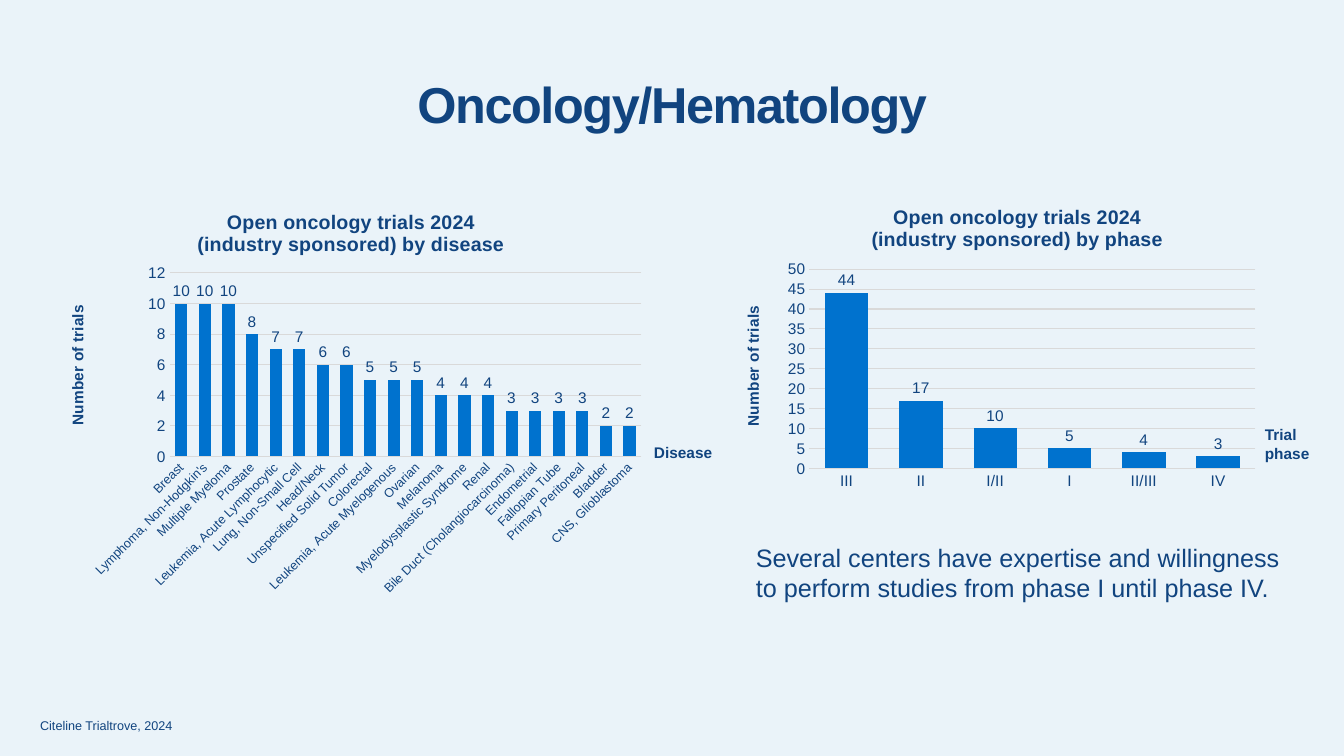
"""Build the Oncology/Hematology slide with two column charts and notes on the trials."""
from dataclasses import dataclass
from typing import Any

from lxml import etree
from pptx import Presentation
from pptx import util as u
from pptx.chart import data as cd
from pptx.dml.color import RGBColor
from pptx.enum import chart as ce, text as te
from pptx.oxml import ns

NAVY, BLUE, GREY, PALE = "11447F", "0072CE", "D9D9D9", "EAF3F9"
Box = tuple[float, float, float, float]


@dataclass
class Note:
    words: str
    box: Box
    size: float
    bold: bool = False


@dataclass
class Graph:
    title: list[str]
    box: Box
    data: list[tuple[str, int]]
    top: int
    step: int
    gap: int
    size: float
    turn: int
    plot: Box
    head: tuple[float, float]
    side: tuple[float, float]


NOTES = [
    Note("Citeline Trialtrove, 2024", (21.6, 509, 917.3, 20.2), 9),
    Note("Trial phase", (896.4, 300.2, 48.2, 33.8), 11, True),
    Note("Disease", (460, 313.2, 82.8, 20.9), 11, True),
    Note("Several centers have expertise and willingness to perform studies "
         "from phase I until phase IV.", (532.8, 383.8, 398.9, 51.1), 18),
]

GRAPHS = [
    Graph(["Open oncology trials 2024", "(industry sponsored) by disease"],
          (28, 135.4, 443.5, 298),
          [("Breast", 10), ("Lymphoma, Non-Hodgkin's", 10), ("Multiple Myeloma", 10),
           ("Prostate", 8), ("Leukemia, Acute Lymphocytic", 7),
           ("Lung, Non-Small Cell", 7), ("Head/Neck", 6),
           ("Unspecified Solid Tumor", 6), ("Colorectal", 5),
           ("Leukemia, Acute Myelogenous", 5), ("Ovarian", 5), ("Melanoma", 4),
           ("Myelodysplastic Syndrome", 4), ("Renal", 4),
           ("Bile Duct (Cholangiocarcinoma)", 3), ("Endometrial", 3),
           ("Fallopian Tube", 3), ("Primary Peritoneal", 3), ("Bladder", 2),
           ("CNS, Glioblastoma", 2)],
          12, 2, 94, 9, -45, (0.21, 0.2, 0.76, 0.44), (0.25, 0.04), (0.04, 0.27)),
    Graph(["Open oncology trials 2024", "(industry sponsored) by phase"],
          (520.6, 135.4, 383.8, 218.9),
          [("III", 44), ("II", 17), ("I/II", 10), ("I", 5), ("II/III", 4), ("IV", 3)],
          50, 5, 71, 11, 0, (0.15, 0.26, 0.83, 0.65), (0.26, 0.04), (0.02, 0.37)),
]


def tint(color: Any, code: str) -> None:
    """Give a colour format the hex colour."""
    color.rgb = RGBColor.from_string(code)


def apply(item: Any, **values: Any) -> None:
    """Set each named value on the item."""
    for name, value in values.items():
        setattr(item, name, value)


def style(font: Any, size: float, bold: bool = False) -> None:
    """Set the navy Arial font."""
    apply(font, name="Arial", size=u.Pt(size), bold=bold)
    tint(font.color, NAVY)


def points(box: Box) -> list[int]:
    """Turn a box in points into lengths."""
    return [u.Pt(value) for value in box]


def stroke(line: Any, code: str) -> None:
    """Draw a thin line in the hex colour."""
    tint(line.color, code)
    line.width = u.Pt(0.75)


def place(node: Any, spot: tuple[float, ...], index: int, inner: bool = False) -> None:
    """Put a chart part at fractions of the chart area."""
    for old in node.findall(ns.qn("c:layout")):
        node.remove(old)
    frame = etree.Element(ns.qn("c:layout"))
    hand = etree.SubElement(frame, ns.qn("c:manualLayout"))
    parts = [("layoutTarget", "inner")] if inner else []
    parts += [("xMode", "edge"), ("yMode", "edge"), *zip("xywh", spot)]
    for tag, value in parts:
        etree.SubElement(hand, ns.qn(f"c:{tag}")).set("val", str(value))
    node.insert(index, frame)


def label(frame: Any, lines: list[str], size: float) -> None:
    """Write bold lines in a chart title."""
    frame.text = "\n".join(lines)
    for para in frame.paragraphs:
        style(para.font, size, True)
        for run in para.runs:
            style(run.font, size, True)


def write(slide: Any, note: Note) -> None:
    """Add a wrapped text box."""
    frame = slide.shapes.add_textbox(*points(note.box)).text_frame
    apply(frame, word_wrap=True, text=note.words)
    style(frame.paragraphs[0].runs[0].font, note.size, note.bold)


def draw(slide: Any, graph: Graph) -> None:
    """Add a column chart."""
    names, counts = zip(*graph.data)
    data = cd.CategoryChartData()
    data.categories = names
    data.add_series("Series 1", counts)
    chart = slide.shapes.add_chart(
        ce.XL_CHART_TYPE.COLUMN_CLUSTERED, *points(graph.box), data).chart
    style(chart.font, 10)
    apply(chart, has_legend=False, has_title=True)
    label(chart.chart_title.text_frame, graph.title, 14)

    cats, vals = chart.category_axis, chart.value_axis
    for axis, size in ((cats, graph.size), (vals, 11)):
        apply(axis, major_tick_mark=ce.XL_TICK_MARK.NONE,
              minor_tick_mark=ce.XL_TICK_MARK.NONE)
        style(axis.tick_labels.font, size)
    cats.has_major_gridlines = False
    stroke(cats.format.line, GREY)
    apply(vals, minimum_scale=0, maximum_scale=graph.top, major_unit=graph.step,
          has_major_gridlines=True, has_title=True)
    stroke(vals.major_gridlines.format.line, GREY)
    vals.format.line.fill.background()
    label(vals.axis_title.text_frame, ["Number of trials"], 11)

    plot = chart.plots[0]
    apply(plot, gap_width=graph.gap, overlap=-23, vary_by_categories=False,
          has_data_labels=True)
    apply(plot.data_labels, show_value=True,
          position=ce.XL_LABEL_POSITION.OUTSIDE_END)
    style(plot.data_labels.font, 11)
    fill = plot.series[0].format.fill
    fill.solid()
    tint(fill.fore_color, BLUE)

    root = chart.element
    for query, turn in (("c:catAx/c:txPr", graph.turn), ("c:valAx/c:title/c:tx/c:rich", -90)):
        body = root.xpath(f".//{query}/a:bodyPr")[0]
        body.set("rot", str(turn * 60000))
        body.set("vert", "horz")
    place(root.xpath("c:chart/c:title")[0], graph.head, 1)
    place(root.xpath(".//c:valAx/c:title")[0], graph.side, 1)
    place(root.xpath(".//c:plotArea")[0], graph.plot, 0, True)


def main() -> None:
    """Build and save the slide."""
    deck = Presentation()
    apply(deck, slide_width=u.Pt(960), slide_height=u.Pt(540))
    slide = deck.slides.add_slide(deck.slide_layouts[5])
    back = slide.background.fill
    back.solid()
    tint(back.fore_color, PALE)

    title = slide.shapes.title
    apply(title, **dict(zip(("left", "top", "width", "height"),
                            points((66.2, 0, 828, 99.4)))))
    apply(title.text_frame, text="Oncology/Hematology", word_wrap=True,
          vertical_anchor=te.MSO_ANCHOR.BOTTOM)
    para = title.text_frame.paragraphs[0]
    apply(para, alignment=te.PP_ALIGN.CENTER, line_spacing=0.9)
    style(para.runs[0].font, 36, True)
    para.runs[0].font._element.set("spc", "-100")

    for graph in GRAPHS:
        draw(slide, graph)
    for note in NOTES:
        write(slide, note)
    deck.save("out.pptx")


if __name__ == "__main__":
    main()
